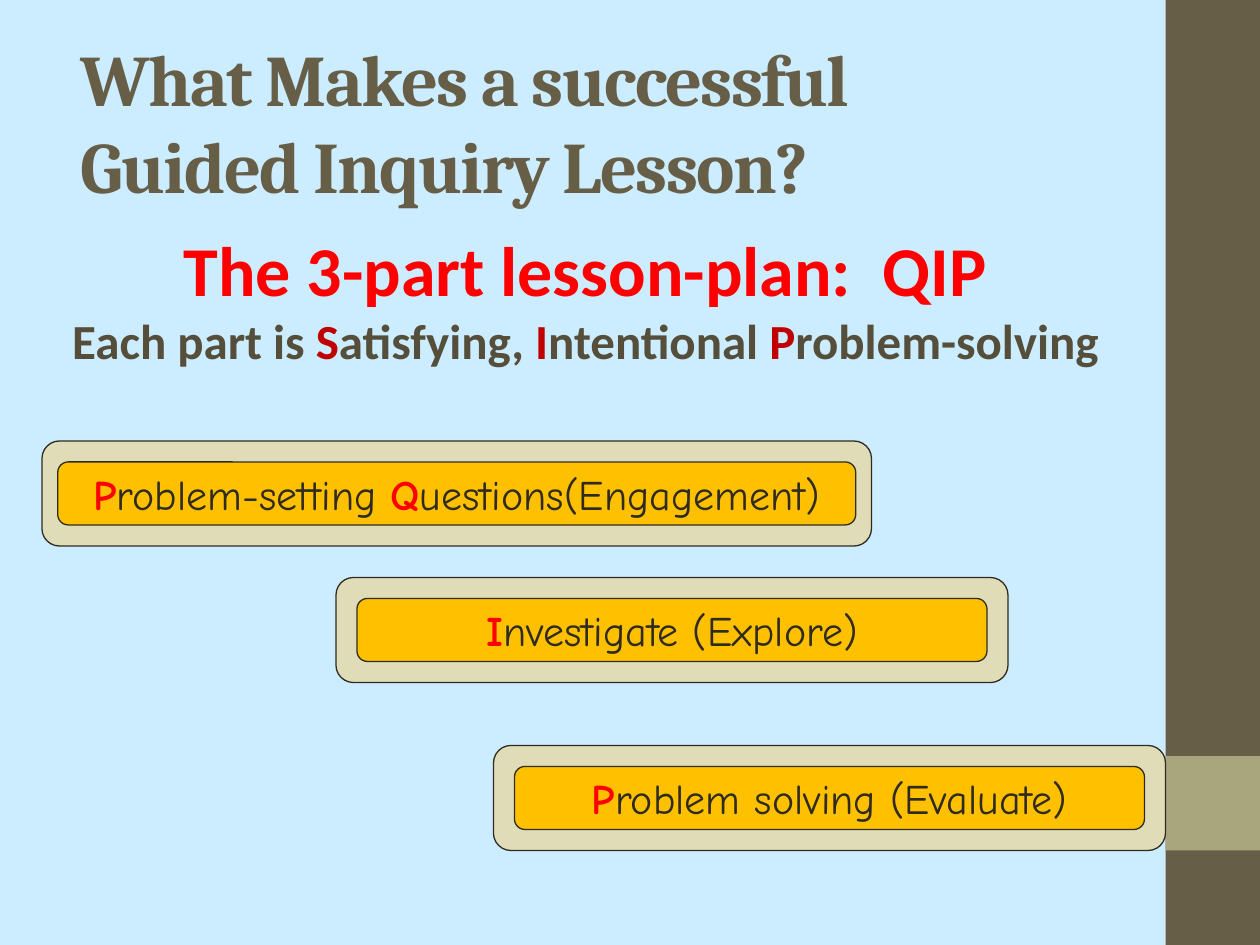
from dataclasses import dataclass

from pptx import Presentation
from pptx.dml.color import RGBColor
from pptx.enum.shapes import MSO_SHAPE
from pptx.enum.text import MSO_ANCHOR, MSO_AUTO_SIZE, PP_ALIGN
from pptx.util import Pt


@dataclass(frozen=True)
class Theme:
    sky: str = "CCECFF"
    bark: str = "675E47"
    moss: str = "A9A57C"
    sand: str = "DFDCB7"
    gold: str = "FFC000"
    ink: str = "2F2B20"
    olive: str = "554E3A"
    red: str = "FF0000"
    crimson: str = "C00000"
    title_font: str = "Cambria"
    body_font: str = "Calibri"
    step_font: str = "Comic Neue"
    title_size: float = 41.4
    heading_size: int = 40
    subheading_size: int = 28
    step_size: int = 24


class SlideBuilder:
    def __init__(self, page, theme):
        self.page = page
        self.theme = theme

    def paint(self, fill, color):
        fill.solid()
        fill.fore_color.rgb = RGBColor.from_string(color)

    def shape(self, kind, left, top, width, height, color, outlined=False):
        shape = self.page.shapes.add_shape(
            kind, Pt(left), Pt(top), Pt(width), Pt(height))
        shape.shadow.inherit = False
        self.paint(shape.fill, color)
        if outlined:
            self.paint(shape.line.fill, self.theme.ink)
            shape.line.width = Pt(0.75)
        else:
            shape.line.fill.background()
        return shape

    def style(self, paragraph, font, size, bold, align=PP_ALIGN.CENTER):
        paragraph.alignment = align
        paragraph.font.name = font
        paragraph.font.size = Pt(size)
        paragraph.font.bold = bold

    def add_spans(self, paragraph, marked_text, color, accent):
        for index, piece in enumerate(marked_text.split("*")):
            if piece:
                span = paragraph.add_run()
                span.text = piece
                self.paint(span.font.fill, accent if index % 2 else color)
                if index % 2:
                    span.font.bold = True

    def title(self, text, left, top, width, height):
        theme = self.theme
        box = self.page.shapes.title
        box.left, box.top, box.width, box.height = map(Pt, (left, top, width, height))
        frame = box.text_frame
        frame.auto_size = MSO_AUTO_SIZE.NONE
        frame.vertical_anchor = MSO_ANCHOR.MIDDLE
        frame.text = text
        paragraph = frame.paragraphs[0]
        self.style(paragraph, theme.title_font, theme.title_size, True, PP_ALIGN.LEFT)
        self.paint(paragraph.font.fill, theme.bark)
        for span in paragraph.runs:
            span._r.get_or_add_rPr().set("spc", "-100")

    def text(self, lines, left, top, width, height):
        box = self.page.shapes.add_textbox(Pt(left), Pt(top), Pt(width), Pt(height))
        frame = box.text_frame
        frame.word_wrap = True
        for index, (marked_text, size, color, accent) in enumerate(lines):
            paragraph = frame.add_paragraph() if index else frame.paragraphs[0]
            self.style(paragraph, self.theme.body_font, size, True)
            self.add_spans(paragraph, marked_text, color, accent)

    def step(self, marked_text, left, top, width, side):
        theme = self.theme
        kind = MSO_SHAPE.FLOWCHART_ALTERNATE_PROCESS
        self.shape(kind, left, top, width, 60, theme.sand, True)
        label = self.shape(
            kind, left + side, top + 12, width - 2 * side, 36, theme.gold, True)
        frame = label.text_frame
        frame.word_wrap = False
        frame.vertical_anchor = MSO_ANCHOR.MIDDLE
        paragraph = frame.paragraphs[0]
        self.style(paragraph, theme.step_font, theme.step_size, False)
        self.add_spans(paragraph, marked_text, theme.ink, theme.red)


def main():
    theme = Theme()
    deck = Presentation()
    deck.slide_width, deck.slide_height = Pt(720), Pt(540)
    page = deck.slides.add_slide(deck.slide_layouts[5])
    builder = SlideBuilder(page, theme)
    builder.paint(page.background.fill, theme.sky)

    builder.shape(MSO_SHAPE.RECTANGLE, 666, 0, 54, 540, theme.bark)
    builder.shape(MSO_SHAPE.RECTANGLE, 666, 432, 54, 54, theme.moss)
    builder.title("What Makes a successful \vGuided Inquiry Lesson?", 39, 24, 648, 90)

    steps = [
        ("*P*roblem-setting *Q*uestions(Engagement)", 24, 252, 474, 9),
        ("*I*nvestigate (Explore)", 192, 330, 384, 12),
        ("*P*roblem solving (Evaluate)", 282, 426, 384, 12),
    ]
    for step in steps:
        builder.step(*step)

    builder.text([
        ("The 3-part lesson-plan:  QIP", theme.heading_size, theme.red, theme.red),
        ("Each part is *S*atisfying, *I*ntentional *P*roblem-solving",
         theme.subheading_size, theme.olive, theme.crimson),
    ], 3, 126, 663, 90)
    deck.save("out.pptx")


if __name__ == "__main__":
    main()
